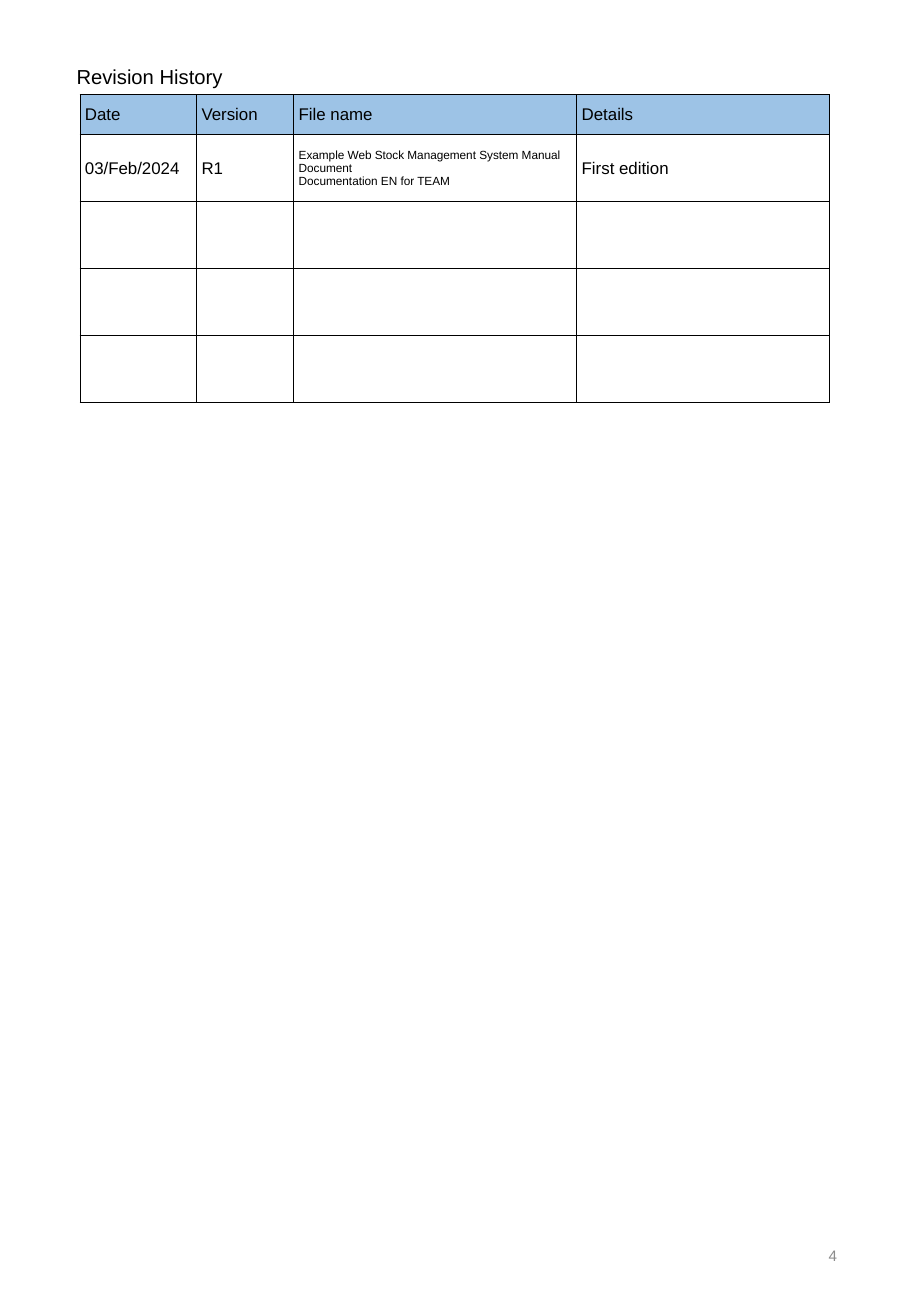
from lxml import etree
from pptx import Presentation
from pptx.dml.color import RGBColor
from pptx.enum import text
from pptx.oxml import ns
from pptx.util import Inches, Pt

TITLE = "Revision History"
PAGE_NUMBER = "4"
HEADINGS = ["Date", "Version", "File name", "Details"]
REVISIONS = [
    ["03/Feb/2024", "R1",
     "Example Web Stock Management System Manual Document\nDocumentation EN for TEAM",
     "First edition"],
]
EMPTY_ROWS = 3
COLUMN_WIDTHS = [0.96, 0.8, 2.33, 2.08]
HEADING_HEIGHT, REVISION_HEIGHT = 0.33, 0.55
FILE_COLUMN = HEADINGS.index("File name")
BLACK, GREY, HEADING_BLUE = "000000", "8C8C8C", "9DC3E6"


def style(frame, size, color=BLACK, align=text.PP_ALIGN.LEFT):
    frame.vertical_anchor = text.MSO_ANCHOR.MIDDLE
    for paragraph in frame.paragraphs:
        paragraph.alignment = align
        paragraph.font.name = "Arial"
        paragraph.font.size = Pt(size)
        paragraph.font.color.rgb = RGBColor.from_string(color)


def add_borders(cell, color=BLACK, width=0.75):
    properties = cell._tc.get_or_add_tcPr()
    for side in ("a:lnL", "a:lnR", "a:lnT", "a:lnB"):
        line = etree.SubElement(properties, ns.qn(side), w=str(Pt(width)))
        fill = etree.SubElement(line, ns.qn("a:solidFill"))
        etree.SubElement(fill, ns.qn("a:srgbClr"), val=color)


def place(shape, left, top, width, height):
    shape.left, shape.top = Inches(left), Inches(top)
    shape.width, shape.height = Inches(width), Inches(height)


def add_history(slide):
    rows = [HEADINGS] + REVISIONS + [[""] * len(HEADINGS)] * EMPTY_ROWS
    heights = [HEADING_HEIGHT] + [REVISION_HEIGHT] * (len(rows) - 1)
    history = slide.shapes.add_table(
        len(rows), len(HEADINGS), Inches(0.66), Inches(0.78),
        Inches(sum(COLUMN_WIDTHS)), Inches(sum(heights))).table
    for column, width in zip(history.columns, COLUMN_WIDTHS):
        column.width = Inches(width)
    for r, (row, height) in enumerate(zip(rows, heights)):
        history.rows[r].height = Inches(height)
        for c, entry in enumerate(row):
            cell = history.cell(r, c)
            cell.text = entry
            style(cell.text_frame, 7 if r and c == FILE_COLUMN else 10)
            cell.vertical_anchor = text.MSO_ANCHOR.MIDDLE
            cell.margin_left, cell.margin_right = Inches(0.04), Inches(0.1)
            cell.margin_top = cell.margin_bottom = Inches(0.05)
            add_borders(cell)
            if r == 0:
                cell.fill.solid()
                cell.fill.fore_color.rgb = RGBColor.from_string(HEADING_BLUE)
            else:
                cell.fill.background()


def main():
    deck = Presentation()
    deck.slide_width, deck.slide_height = Inches(7.5), Inches(10.83)
    slide = deck.slides.add_slide(deck.slide_layouts.get_by_name("Title Only"))

    title = slide.shapes.title
    place(title, 0.47, 0.48, 1.56, 0.3)
    title.text = TITLE
    title.text_frame.auto_size = text.MSO_AUTO_SIZE.NONE
    title.text_frame.word_wrap = False
    title.text_frame.margin_left = Inches(0.16)
    style(title.text_frame, 12)

    add_history(slide)

    number = slide.shapes.add_textbox(
        Inches(5.3), Inches(10.04), Inches(1.69), Inches(0.58)).text_frame
    number.word_wrap = True
    number.text = PAGE_NUMBER
    style(number, 9, GREY, text.PP_ALIGN.RIGHT)

    deck.save("out.pptx")


if __name__ == "__main__":
    main()
